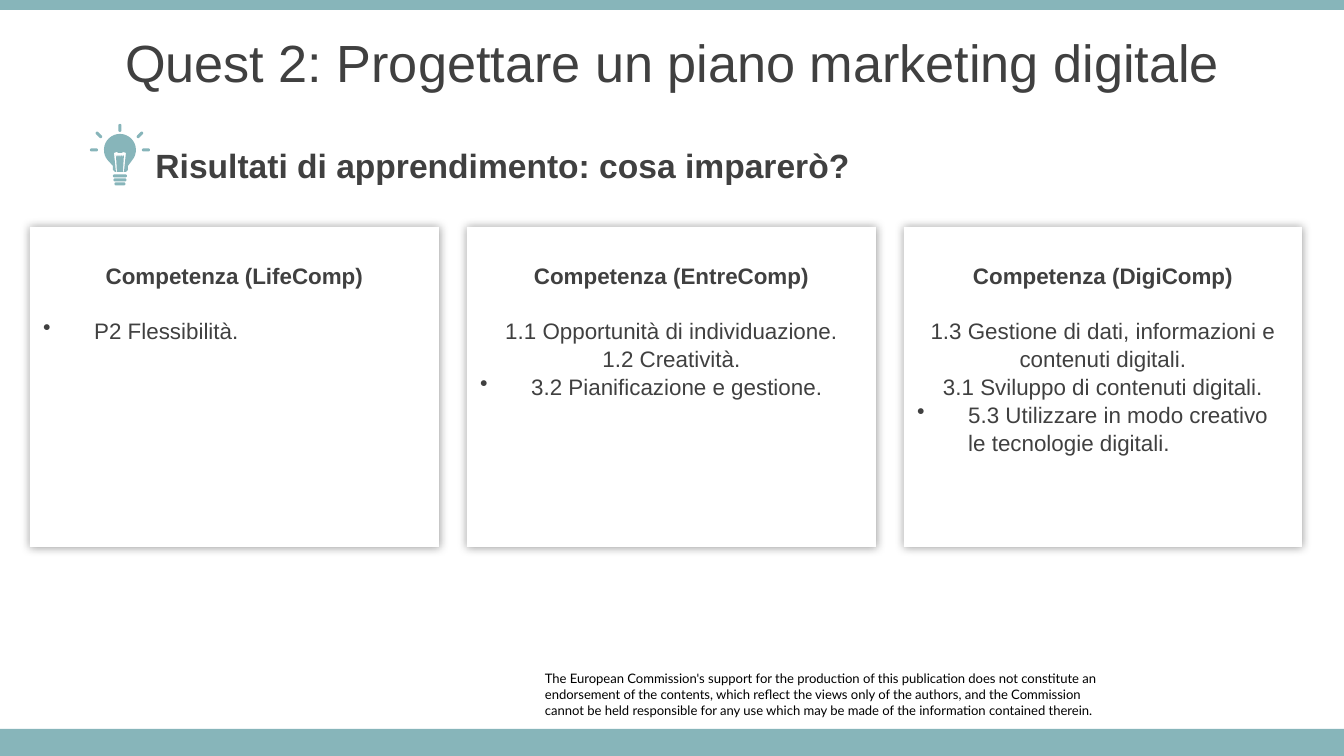
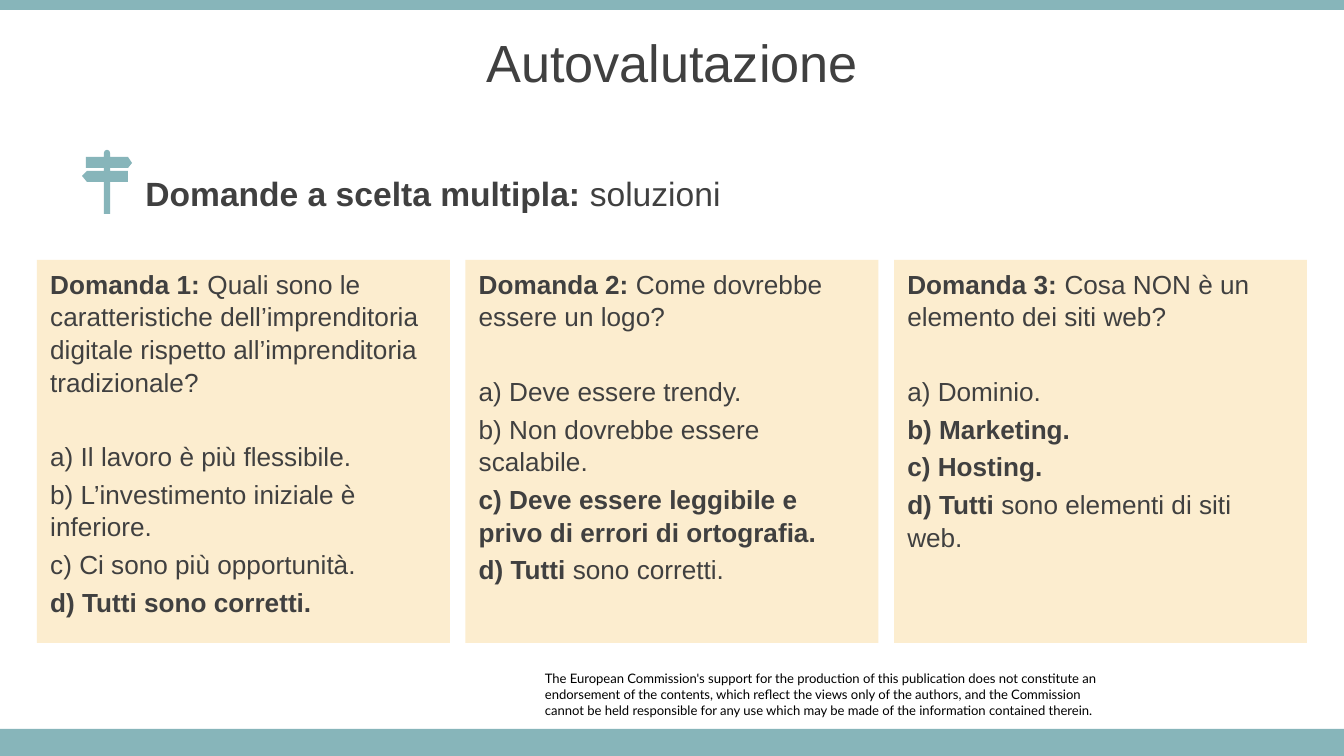
import math

from lxml import etree
from pptx import Presentation
from pptx import util as u
from pptx.dml.color import RGBColor
from pptx.enum import shapes, text
from pptx.oxml import ns

# ---- Shared look: lengths in px, 134.4 px to the inch ----
PX = 914400 / 134.4
WIDTH, HEIGHT = 1344, 756
COLORS = {"teal": "87B5BA", "text": "404040", "black": "000000",
          "white": "FFFFFF", "cream": "FCEDCF"}
FONT, FOOTER_FONT = "Arial", "Lato"
TITLE_BOX = (0, 19, WIDTH, 85)
BANDS = [(0, 729, WIDTH, 27), (0, 0, WIDTH, 10)]
FOOTER_BOX = (545, 671, 561, 47)
CARD_LINE_SPACING = 1.045
CENTER, LEFT = text.PP_ALIGN.CENTER, text.PP_ALIGN.LEFT

# ---- Content: **...** marks bold ----
FOOTER = [
    "The European Commission's support for the production of this publication "
    "does not constitute an endorsement of the contents, which reflect the views "
    "only of the authors, and the Commission",
    "cannot be held responsible for any use which may be made of the information "
    "contained therein.",
]
OUTCOMES = {
    "title": "Quest 2: Progettare un piano marketing digitale",
    "heading": "**Risultati di apprendimento: cosa imparerò?**",
    "heading_box": (142, 144, 1005, 42),
}
# Name, width, centred lines, bulleted line
COMPETENCES = [
    ("Competenza (LifeComp)", 409, [], "P2 Flessibilità."),
    ("Competenza (EntreComp)", 409,
     ["1.1 Opportunità di individuazione.", "1.2 Creatività."],
     "3.2 Pianificazione e gestione."),
    ("Competenza (DigiComp)", 398,
     ["1.3 Gestione di dati, informazioni e contenuti digitali.",
      "3.1 Sviluppo di contenuti digitali."],
     "5.3 Utilizzare in modo creativo le tecnologie digitali."),
]
ASSESSMENT = {
    "title": "Autovalutazione",
    "heading": "**Domande a scelta multipla: **soluzioni",
    "heading_box": (132, 172, 899, 42),
}
QUESTIONS = [
    ("**Domanda 1: **Quali sono le caratteristiche dell’imprenditoria digitale "
     "rispetto all’imprenditoria tradizionale?",
     ["a) Il lavoro è più flessibile.", "b) L’investimento iniziale è inferiore.",
      "c) Ci sono più opportunità.", "**d) Tutti sono corretti.**"]),
    ("**Domanda 2: **Come dovrebbe essere un logo?",
     ["a) Deve essere trendy.", "b) Non dovrebbe essere scalabile.",
      "**c) Deve essere leggibile e privo di errori di ortografia.**",
      "**d) Tutti** sono corretti."]),
    ("**Domanda 3: **Cosa NON è un elemento dei siti web?",
     ["a) Dominio.", "**b) Marketing.**", "**c) Hosting.**",
      "**d) Tutti** sono elementi di siti web."]),
]


# ---- Helpers ----
def emu(px):
    return u.Emu(round(px * PX))


def color(name):
    return RGBColor.from_string(COLORS[name])


def place(shape, box):
    shape.left, shape.top, shape.width, shape.height = map(emu, box)


def paint(shape, fill):
    shape.shadow.inherit = False
    shape.fill.solid()
    shape.fill.fore_color.rgb = color(fill)
    shape.line.fill.background()


def add_rectangle(slide, box, fill):
    shape = slide.shapes.add_shape(shapes.MSO_SHAPE.RECTANGLE, *map(emu, box))
    paint(shape, fill)
    return shape


def add_glow(shape):
    effects = shape.element.spPr.find(ns.qn("a:effectLst"))
    shadow = etree.SubElement(effects, ns.qn("a:outerShdw"),
                              blurRad=str(u.Pt(5)), dist="0", algn="ctr", rotWithShape="0")
    black = etree.SubElement(shadow, ns.qn("a:srgbClr"), val=COLORS["black"])
    etree.SubElement(black, ns.qn("a:alpha"), val="40000")


def set_bullet(paragraph, character=None, hang=0):
    properties = paragraph._p.get_or_add_pPr()
    properties.set("marL", str(emu(hang)))
    properties.set("indent", str(-emu(hang)))
    if character:
        etree.SubElement(properties, ns.qn("a:buChar"), char=character)
    else:
        etree.SubElement(properties, ns.qn("a:buNone"))


def write(frame, lines, size, font=FONT, ink="text", spacing=None):
    """Each line is (text, alignment, space before, bulleted)."""
    frame.word_wrap = True
    for index, (line, align, before, bulleted) in enumerate(lines):
        paragraph = frame.paragraphs[0] if index == 0 else frame.add_paragraph()
        set_bullet(paragraph, *(("•", 51) if bulleted else ()))
        paragraph.alignment = align
        paragraph.space_before = u.Pt(before if index else 0)
        if spacing:
            paragraph.line_spacing = spacing
        for part, words in enumerate(line.split("**")):
            if words:
                run = paragraph.add_run()
                run.text = words
                run.font.name, run.font.size = font, u.Pt(size)
                run.font.bold = part % 2 == 1
                run.font.color.rgb = color(ink)


def fill_placeholder(shape, box, line, size, align):
    place(shape, box)
    frame = shape.text_frame
    frame.auto_size = text.MSO_AUTO_SIZE.NONE
    frame.vertical_anchor = text.MSO_ANCHOR.MIDDLE
    write(frame, [(line, align, 0, False)], size)


def add_card(slide, box, fill, lines, size, top_inset=7):
    card = add_rectangle(slide, box, fill)
    card.text_frame.vertical_anchor = text.MSO_ANCHOR.TOP
    card.text_frame.margin_top = emu(top_inset)
    write(card.text_frame, lines, size, spacing=CARD_LINE_SPACING)
    return card


def arc(x, y, radius, start, end, steps=24):
    angles = [math.radians(start + (end - start) * i / steps) for i in range(steps + 1)]
    return [(x + radius * math.cos(a), y + radius * math.sin(a)) for a in angles]


def capsule(x, y, length, angle=0, radius=1.5):
    reach = length / 2 - radius
    dx, dy = reach * math.cos(math.radians(angle)), reach * math.sin(math.radians(angle))
    return (arc(x + dx, y + dy, radius, angle - 90, angle + 90, 8)
            + arc(x - dx, y - dy, radius, angle + 90, angle + 270, 8))


def add_icon(slide, contours):
    scaled = [[(emu(x), emu(y)) for x, y in contour] for contour in contours]
    builder = slide.shapes.build_freeform(*scaled[0][0], scale=1.0)
    for index, contour in enumerate(scaled):
        if index:
            builder.move_to(*contour[0])
        builder.add_line_segments(contour[1:], close=True)
    paint(builder.convert_to_shape(), "teal")


def bulb():
    glass = arc(120, 150, 16, 140, 400) + [(128, 166), (128, 170), (126, 172),
                                           (115, 172), (113, 170), (113, 166)]
    filament = [(114, 153), (117, 152), (118, 153), (122, 153), (123, 152), (126, 153),
                (124, 172), (123, 172), (124, 155), (123, 157), (122, 155), (121, 157),
                (120, 155), (119, 157), (118, 155), (117, 157), (116, 155),
                (117, 172), (116, 172)]
    base = [capsule(120, y, length) for y, length in ((176, 14), (180, 13), (184, 11))]
    rays = [capsule(94, 150, 8), capsule(146, 150, 8), capsule(120, 128, 8, 90),
            capsule(99, 135, 8, 45), capsule(140, 135, 8, -45)]
    return [glass, filament, *base, *rays]


def signpost():
    return [arc(107, 153, 3, 180, 360, 12) + [
        (110, 157), (128, 157), (132, 163), (128, 168), (110, 168), (110, 171),
        (128, 171), (128, 182), (110, 182), (110, 214), (104, 214), (104, 182),
        (87, 182), (82, 176), (87, 171), (104, 171), (104, 168), (86, 168),
        (86, 157), (104, 157)]]


# ---- Slides ----
def add_slide(presentation, content, icon):
    slide = presentation.slides.add_slide(presentation.slide_layouts[1])
    title, heading = slide.placeholders
    fill_placeholder(title, TITLE_BOX, content["title"], 28, CENTER)
    fill_placeholder(heading, content["heading_box"], content["heading"], 18, LEFT)
    add_icon(slide, icon)
    return slide


def furnish_layout(slide):
    """Move the bands and the disclaimer into the layout that slides share."""
    layout = slide.slide_layout
    for placeholder in list(layout.placeholders)[2:]:
        layout.shapes.element.remove(placeholder.element)
    disclaimer = slide.shapes.add_textbox(*map(emu, FOOTER_BOX))
    frame = disclaimer.text_frame
    frame.margin_left = frame.margin_top = frame.margin_right = frame.margin_bottom = 0
    write(frame, [(line, LEFT, 0, False) for line in FOOTER], 7, FOOTER_FONT, "black")
    for part in [disclaimer] + [add_rectangle(slide, band, "teal") for band in BANDS]:
        layout.shapes.element.append(part.element)


def add_competences(slide):
    left, top, height, pitch = 30, 227, 320, 437
    for index, (name, width, centred, bulleted) in enumerate(COMPETENCES):
        items = [(line, CENTER, False) for line in centred] + [(bulleted, LEFT, True)]
        lines = [(f"**{name}**", CENTER, 0, False)]
        lines += [(line, align, 0 if i else 14.5, bullet)
                  for i, (line, align, bullet) in enumerate(items)]
        box = (left + index * pitch, top, width, height)
        add_glow(add_card(slide, box, "white", lines, 12, top_inset=34))


def add_questions(slide):
    left, right, top, width, height = 37, 1307, 260, 413, 383
    pitch = (right - left - width) / (len(QUESTIONS) - 1)
    for index, (question, answers) in enumerate(QUESTIONS):
        lines = [(question, LEFT, 0, False)]
        lines += [(answer, LEFT, 2.8 if i else 22.4, False)
                  for i, answer in enumerate(answers)]
        add_card(slide, (left + index * pitch, top, width, height), "cream", lines, 14)


def main():
    presentation = Presentation()
    presentation.slide_width, presentation.slide_height = emu(WIDTH), emu(HEIGHT)
    outcomes = add_slide(presentation, OUTCOMES, bulb())
    furnish_layout(outcomes)
    add_competences(outcomes)
    add_questions(add_slide(presentation, ASSESSMENT, signpost()))
    presentation.save("out.pptx")


if __name__ == "__main__":
    main()
